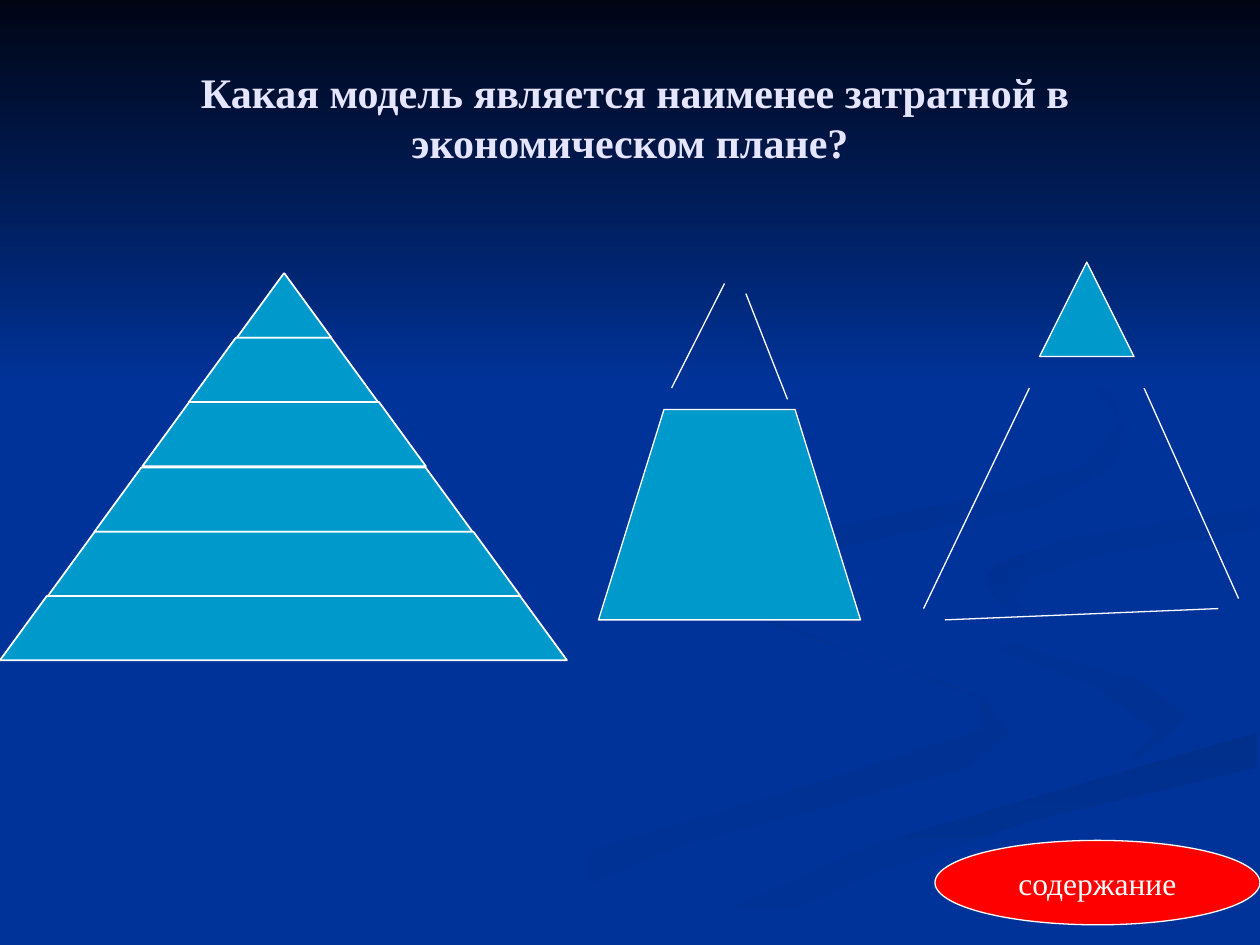
from dataclasses import dataclass

from lxml.etree import SubElement
from pptx import Presentation
from pptx.dml.color import RGBColor
from pptx.enum.shapes import MSO_CONNECTOR as Connector, MSO_SHAPE as Preset
from pptx.enum.text import MSO_ANCHOR as Anchor, PP_ALIGN as Align
from pptx.oxml.ns import qn
from pptx.util import Pt

PX = 9144  # 100 px to the inch
NAVY, TEAL, RED, WHITE, LILAC = "003399", "0099CC", "FF0000", "FFFFFF", "E5E5FF"
FONT = "Times New Roman"

Point = tuple[int, int]


@dataclass
class Ribbon:
    start: str
    end: str
    angle: int  # counter-clockwise
    points: list[Point]


@dataclass
class Stroke:
    begin: Point
    end: Point


RIBBONS = [
    Ribbon(NAVY, "003193", 0, [
        (781, 553), (682, 519), (594, 485), (575, 459), (581, 484), (697, 525), (776, 553),
        (780, 579), (652, 620), (417, 690), (300, 749), (361, 749), (532, 674), (769, 609),
        (800, 581)]),
    Ribbon(NAVY, "003193", 315, [
        (943, 570), (905, 540), (758, 498), (724, 464), (746, 500), (868, 544), (918, 581),
        (894, 605), (937, 586)]),
    Ribbon("002F8C", NAVY, 270, [
        (503, 749), (571, 749), (695, 692), (821, 651), (998, 609), (998, 581), (764, 647),
        (630, 693)]),
    Ribbon(NAVY, NAVY, 0, [
        (725, 464), (745, 490), (905, 540), (943, 570), (902, 603), (663, 668), (477, 749),
        (519, 747), (696, 669), (999, 581), (999, 538), (804, 485), (781, 463), (850, 427),
        (999, 402), (999, 387), (770, 427)]),
    Ribbon("003091", NAVY, 315, [
        (781, 460), (791, 478), (826, 496), (805, 476), (816, 459), (878, 439), (998, 420),
        (998, 402), (849, 427), (791, 447)]),
    Ribbon("002F8E", NAVY, 315, [
        (683, 430), (825, 402), (883, 370), (894, 344), (880, 307), (843, 275), (762, 233),
        (846, 279), (889, 335), (861, 370), (791, 392), (625, 426), (580, 451), (584, 479),
        (622, 500), (593, 470), (624, 444)]),
    # Dark fade across the top
    Ribbon("000514", NAVY, 270, [(0, 0), (0, 308), (1000, 308), (1000, 0)]),
]

STROKES = [
    Stroke((533, 308), (575, 225)),
    Stroke((625, 317), (592, 233)),
    Stroke((817, 308), (733, 483)),
    Stroke((908, 308), (983, 475)),
    Stroke((750, 492), (967, 483)),
]


def color(value: str) -> RGBColor:
    return RGBColor.from_string(value)


def paint(shape, fill: str, line_width: float = 0.75) -> None:
    shape.shadow.inherit = False
    shape.fill.solid()
    shape.fill.fore_color.rgb = color(fill)
    shape.line.color.rgb = color(WHITE)
    shape.line.width = Pt(line_width)


def add_preset(page, preset, left: int, top: int, width: int, height: int,
               fill: str, line_width: float = 0.75):
    shape = page.shapes.add_shape(preset, left * PX, top * PX, width * PX, height * PX)
    paint(shape, fill, line_width)
    return shape


def add_outline(page, points: list[Point]):
    builder = page.shapes.build_freeform(*points[0], scale=PX)
    builder.add_line_segments(points[1:], close=True)
    return builder.convert_to_shape()


def add_ribbon(page, ribbon: Ribbon) -> None:
    shape = add_outline(page, ribbon.points)
    shape.shadow.inherit = False
    shape.line.fill.background()
    shape.fill.gradient()
    shape.fill.gradient_angle = ribbon.angle
    for stop, value, position in zip(shape.fill.gradient_stops, (ribbon.start, ribbon.end), (0, 1)):
        stop.color.rgb = color(value)
        stop.position = position


def add_stroke(page, stroke: Stroke) -> None:
    ends = [value * PX for value in (*stroke.begin, *stroke.end)]
    line = page.shapes.add_connector(Connector.STRAIGHT, *ends)
    line.line.color.rgb = color(WHITE)
    line.line.width = Pt(0.75)
    SubElement(line._element.spPr, qn("a:effectLst"))


def write(shape, text: str, size: int, fill: str, bold: bool, wrap: bool) -> None:
    frame = shape.text_frame
    frame.text = text
    frame.word_wrap = wrap
    frame.vertical_anchor = Anchor.MIDDLE
    para = frame.paragraphs[0]
    para.alignment = Align.CENTER
    font = para.runs[0].font
    font.name, font.size, font.bold = FONT, Pt(size), bold
    font.color.rgb = color(fill)


def add_pyramid(page, center: int, top: int, levels: int) -> None:
    for level in range(levels):
        width = 75 * (level + 1)
        shape = add_preset(page, Preset.TRAPEZOID, center - width // 2,
                           top + round(51.2 * level), width, 51, TEAL, 1)
        shape.adjustments[0] = 0.73


def main() -> None:
    deck = Presentation()
    deck.slide_width, deck.slide_height = 1000 * PX, 750 * PX
    page = deck.slides.add_slide(deck.slide_layouts[6])

    # Background
    page.background.fill.solid()
    page.background.fill.fore_color.rgb = color(NAVY)
    for ribbon in RIBBONS:
        add_ribbon(page, ribbon)

    # Title
    title = page.shapes.add_textbox(50 * PX, 30 * PX, 900 * PX, 125 * PX)
    write(title, " Какая модель является наименее затратной в экономическом плане?",
          24, LILAC, True, True)

    # Three models: full pyramid, base only, tip only
    add_pyramid(page, center=225, top=217, levels=6)
    add_preset(page, Preset.FLOWCHART_EXTRACT, 825, 208, 75, 75, TEAL)
    paint(add_outline(page, [(475, 492), (527, 325), (631, 325), (683, 492)]), TEAL)
    for stroke in STROKES:
        add_stroke(page, stroke)

    # Contents button
    button = add_preset(page, Preset.OVAL, 742, 667, 258, 67, RED)
    write(button, "содержание", 18, WHITE, False, False)

    deck.save("out.pptx")


if __name__ == "__main__":
    main()
